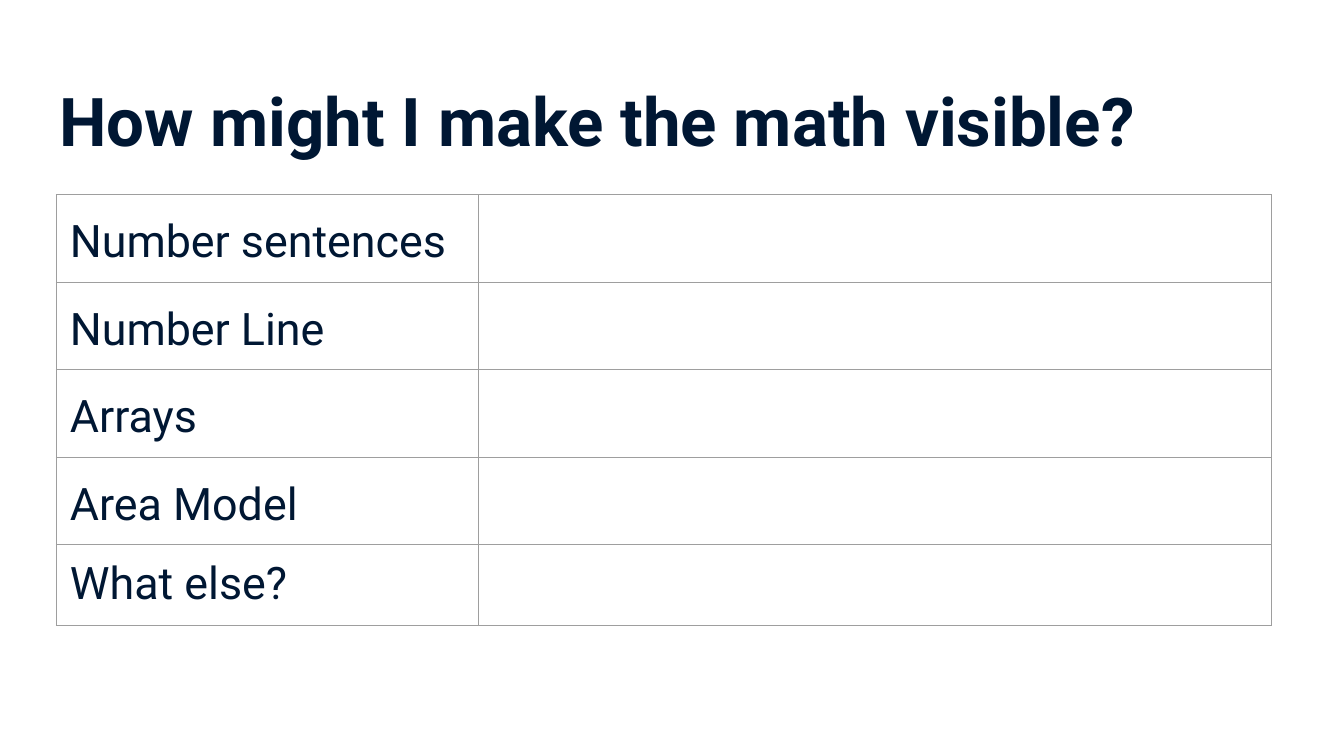
from lxml.etree import SubElement
from pptx import Presentation
from pptx.dml.color import RGBColor
from pptx.enum.text import MSO_ANCHOR, MSO_AUTO_SIZE, PP_ALIGN
from pptx.oxml.ns import qn
from pptx.util import Inches, Pt

TITLE = "How might I make the math visible?"
MODELS = ["Number sentences", "Number Line", "Arrays", "Area Model", "What else?"]

FONT = "Roboto"
NAVY = RGBColor(0x00, 0x17, 0x33)
GRAY = RGBColor(0x9E, 0x9E, 0x9E)

WIDE = 10
HIGH = WIDE * 9 / 16
COLS = [3.14, 5.9]
ROW = 0.6
PAD = Inches(0.1)


def write(frame, text, size, bold=False, lines=None, after=None):
    par = frame.paragraphs[0]
    par.alignment = PP_ALIGN.LEFT
    par.line_spacing = lines
    if after is not None:
        par.space_after = Pt(after)
    run = par.add_run()
    run.text = text
    font = run.font
    font.name, font.size, font.bold = FONT, Pt(size), bold
    font.color.rgb = NAVY


def pad(box):
    box.margin_left = box.margin_right = PAD
    box.margin_top = box.margin_bottom = PAD


def frame_cell(cell):
    """Draw a thin gray line on all four sides and clear the fill."""
    props = cell._tc.get_or_add_tcPr()
    for side in ("lnL", "lnR", "lnT", "lnB"):
        line = SubElement(props, qn(f"a:{side}"), w=str(Pt(0.75)))
        fill = SubElement(line, qn("a:solidFill"))
        SubElement(fill, qn("a:srgbClr"), val=str(GRAY))
    cell.fill.background()


def add_title(slide):
    title = slide.shapes.title
    title.left, title.top = Inches(0.34), Inches(0.49)
    title.width, title.height = Inches(9.32), Inches(0.63)
    frame = title.text_frame
    pad(frame)
    frame.word_wrap = True
    frame.auto_size = MSO_AUTO_SIZE.NONE
    frame.vertical_anchor = MSO_ANCHOR.TOP
    write(frame, TITLE, 36, bold=True)


def add_grid(slide):
    count = len(MODELS)
    table = slide.shapes.add_table(
        count, len(COLS), Inches(0.42), Inches(1.45),
        Inches(sum(COLS)), Inches(ROW * count)).table
    table.first_row = table.horz_banding = False
    for col, width in zip(table.columns, COLS):
        col.width = Inches(width)
    for row in table.rows:
        row.height = Inches(ROW)
    for cell in table.iter_cells():
        pad(cell)
        frame_cell(cell)
    for i, name in enumerate(MODELS):
        last = i == count - 1
        style = {} if last else {"lines": 1.15, "after": 16}
        write(table.cell(i, 0).text_frame, name, 24, **style)


deck = Presentation()
deck.slide_width, deck.slide_height = Inches(WIDE), Inches(HIGH)
slide = deck.slides.add_slide(deck.slide_layouts[5])
add_title(slide)
add_grid(slide)
deck.save("out.pptx")
